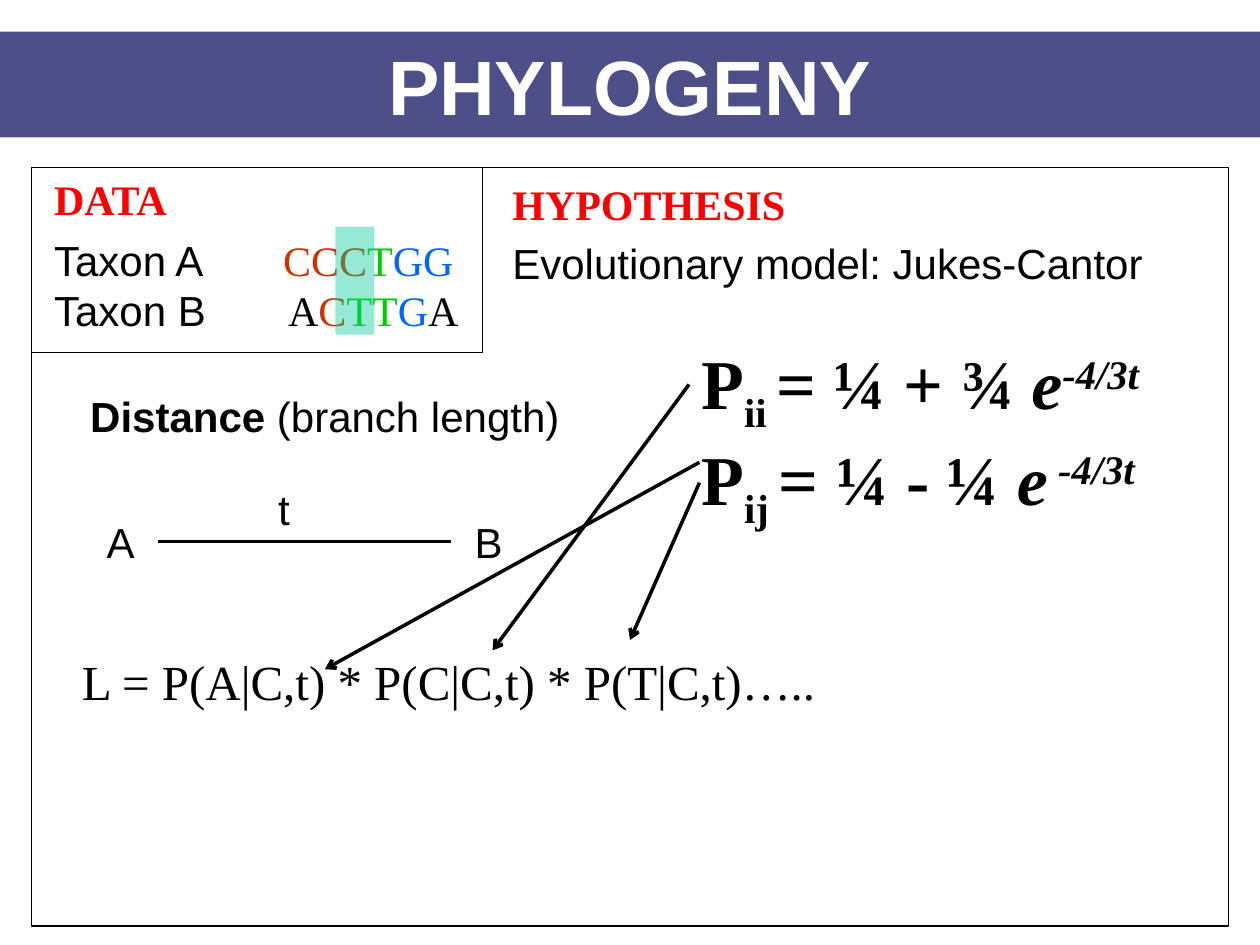
from dataclasses import dataclass

from lxml import etree
from pptx import Presentation
from pptx.dml.color import RGBColor
from pptx.enum.shapes import MSO_CONNECTOR, MSO_SHAPE
from pptx.enum.text import MSO_ANCHOR, PP_ALIGN
from pptx.oxml.ns import qn
from pptx.util import Cm, Pt

STRAIGHT = MSO_CONNECTOR.STRAIGHT
RECTANGLE = MSO_SHAPE.RECTANGLE
MIDDLE = MSO_ANCHOR.MIDDLE
CENTER = PP_ALIGN.CENTER


@dataclass(frozen=True)
class Theme:
    sans: str = "Arial"
    serif: str = "Times New Roman"
    title_size: int = 44
    formula_size: int = 40
    likelihood_size: int = 28
    body_size: int = 24
    black: str = "000000"
    white: str = "FFFFFF"
    heading: str = "FF0000"
    banner: str = "191966"
    highlight: str = "00CC99"
    frame_width: float = 0.75
    line_width: float = 2


THEME = Theme()
BASE_COLORS = {"A": THEME.black, "C": "CC3300", "G": "0066FF", "T": "00CC00"}


# Shared helpers
def add_run(paragraph, text, font=THEME.sans, size=THEME.body_size,
            color=THEME.black, bold=False, italic=False, baseline=0):
    run = paragraph.add_run()
    run.text = text
    run.font.name = font
    run.font.size = Pt(size)
    run.font.bold = bold
    run.font.italic = italic
    run.font.color.rgb = RGBColor.from_string(color)
    if baseline:
        run._r.get_or_add_rPr().set("baseline", str(baseline * 1000))


def add_textbox(slide, left, top, width, height, wrap=True):
    shape = slide.shapes.add_textbox(Cm(left), Cm(top), Cm(width), Cm(height))
    shape.text_frame.word_wrap = wrap
    return shape.text_frame


def add_label(slide, left, top, width, height, text, wrap=True, **style):
    paragraph = add_textbox(slide, left, top, width, height, wrap).paragraphs[0]
    add_run(paragraph, text, **style)
    return paragraph


def add_heading(slide, left, top, width, text):
    add_label(slide, left, top, width, 1.27, text, wrap=False,
              font=THEME.serif, color=THEME.heading, bold=True)


def add_rectangle(slide, left, top, width, height, fill=None, opacity=100):
    """Add an outlined frame, or a borderless translucent block if filled."""
    shape = slide.shapes.add_shape(RECTANGLE, Cm(left), Cm(top), Cm(width), Cm(height))
    shape.shadow.inherit = False
    if fill is None:
        shape.fill.background()
        shape.line.color.rgb = RGBColor.from_string(THEME.black)
        shape.line.width = Pt(THEME.frame_width)
    else:
        shape.fill.solid()
        shape.fill.fore_color.rgb = RGBColor.from_string(fill)
        color = shape._element.spPr.find(".//" + qn("a:srgbClr"))
        etree.SubElement(color, qn("a:alpha"), val=str(opacity * 1000))
        shape.line.fill.background()
    return shape


def add_line(slide, start, end, arrow=False):
    line = slide.shapes.add_connector(
        STRAIGHT, *(Cm(value) for value in (*start, *end)))
    line.line.color.rgb = RGBColor.from_string(THEME.black)
    line.line.width = Pt(THEME.line_width)
    if arrow:
        etree.SubElement(line.line._get_or_add_ln(), qn("a:tailEnd"), type="arrow")
    etree.SubElement(line._element.spPr, qn("a:effectLst"))


# Regions
def build_title(slide, left, top, width, height):
    banner = add_rectangle(slide, left, top, width, height, THEME.banner, 77)
    banner.text_frame.vertical_anchor = MIDDLE
    paragraph = banner.text_frame.paragraphs[0]
    paragraph.alignment = CENTER
    add_run(paragraph, "PHYLOGENY", size=THEME.title_size, color=THEME.white, bold=True)


def build_data(slide, left, top, width, height):
    add_heading(slide, left + 0.2, top, 2.87, "DATA")
    text_frame = add_textbox(slide, left + 0.2, top + 1.22, width - 0.29, 2.5)
    taxa = [("Taxon A", "CCCTGG", 4.62), ("Taxon B", "ACTTGA", 4.72)]
    for index, (taxon, sequence, tab_stop) in enumerate(taxa):
        paragraph = text_frame.add_paragraph() if index else text_frame.paragraphs[0]
        tabs = etree.SubElement(paragraph._p.get_or_add_pPr(), qn("a:tabLst"))
        etree.SubElement(tabs, qn("a:tab"), pos=str(Cm(tab_stop)), algn="l")
        add_run(paragraph, taxon + "\t")
        for base in sequence:
            add_run(paragraph, base, font=THEME.serif, color=BASE_COLORS[base])
    add_rectangle(slide, left, top, width, height)
    # Highlighted alignment site
    add_rectangle(slide, left + 6.12, top + 1.19, 0.79, 2.18, THEME.highlight, 41)


def build_hypothesis(slide, left, top, width, height):
    add_heading(slide, left, top, 6.07, "HYPOTHESIS")
    add_label(slide, left, top + 1.19, width, 1.3, "Evolutionary model: Jukes-Cantor")
    # Transition probabilities
    text_frame = add_textbox(slide, left + 3.81, top + 3.25, 9.75, height - 3.25, False)
    formulas = [("ii ", "= ¼ + ¾ ", "-4/3t"), ("ij ", "= ¼ - ¼ ", " -4/3t")]
    for index, (subscript, terms, exponent) in enumerate(formulas):
        paragraph = text_frame.add_paragraph() if index else text_frame.paragraphs[0]
        for text, italic, baseline in [("P", False, 0), (subscript, False, -25),
                                       (terms, False, 0), ("e", True, 0),
                                       (exponent, True, 30)]:
            add_run(paragraph, text, THEME.serif, THEME.formula_size,
                    bold=True, italic=italic, baseline=baseline)


def build_distance(slide, left, top, width):
    paragraph = add_label(slide, left, top, width, 1.3, "Distance", bold=True)
    add_run(paragraph, " (branch length)")
    # Branch between the two taxa
    for text, x, y, label_width in [("A", 0.33, 2.54, 1.07), ("B", 7.75, 2.54, 1.07),
                                    ("t", 3.79, 1.88, 0.76)]:
        add_label(slide, left + x, top + y, label_width, 1.27, text, wrap=False)
    add_line(slide, (left + 1.61, top + 3.17), (left + 7.52, top + 3.17))


def build_likelihood(slide, left, top, width, height):
    formula_height = 1.45
    add_label(slide, left, top + height - formula_height, width, formula_height,
              "L = P(A|C,t) * P(C|C,t) * P(T|C,t)…..",
              font=THEME.serif, size=THEME.likelihood_size)
    # Arrows from each probability to the factors that use it
    for start_x, start_y, end_x, end_y in [(12.49, 0, 8.53, 5.36),
                                           (12.7, 1.57, 5.15, 5.74),
                                           (12.7, 1.98, 11.3, 5.15)]:
        add_line(slide, (left + start_x, top + start_y),
                 (left + end_x, top + end_y), arrow=True)


def main():
    presentation = Presentation()
    presentation.slide_width = Cm(25.4)
    presentation.slide_height = Cm(19.05)
    slide = presentation.slides.add_slide(presentation.slide_layouts[6])

    add_rectangle(slide, 0.64, 3.38, 24.13, 15.29)
    build_title(slide, 0, 0.64, 25.4, 2.13)
    build_data(slide, 0.64, 3.38, 9.09, 3.73)
    build_hypothesis(slide, 10.08, 3.48, 14.45, 8.63)
    build_distance(slide, 1.57, 7.75, 12.5)
    build_likelihood(slide, 1.4, 7.75, 16.08, 6.7)

    presentation.save("out.pptx")


if __name__ == "__main__":
    main()
